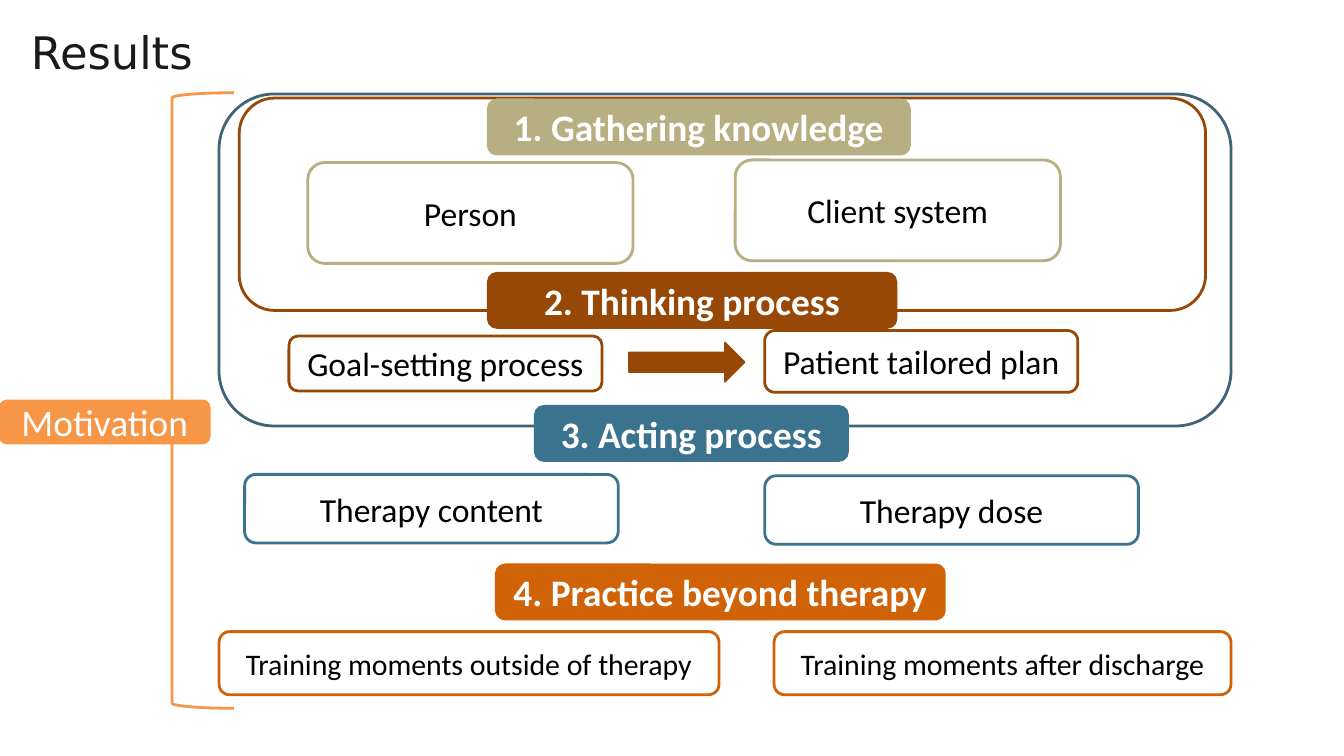
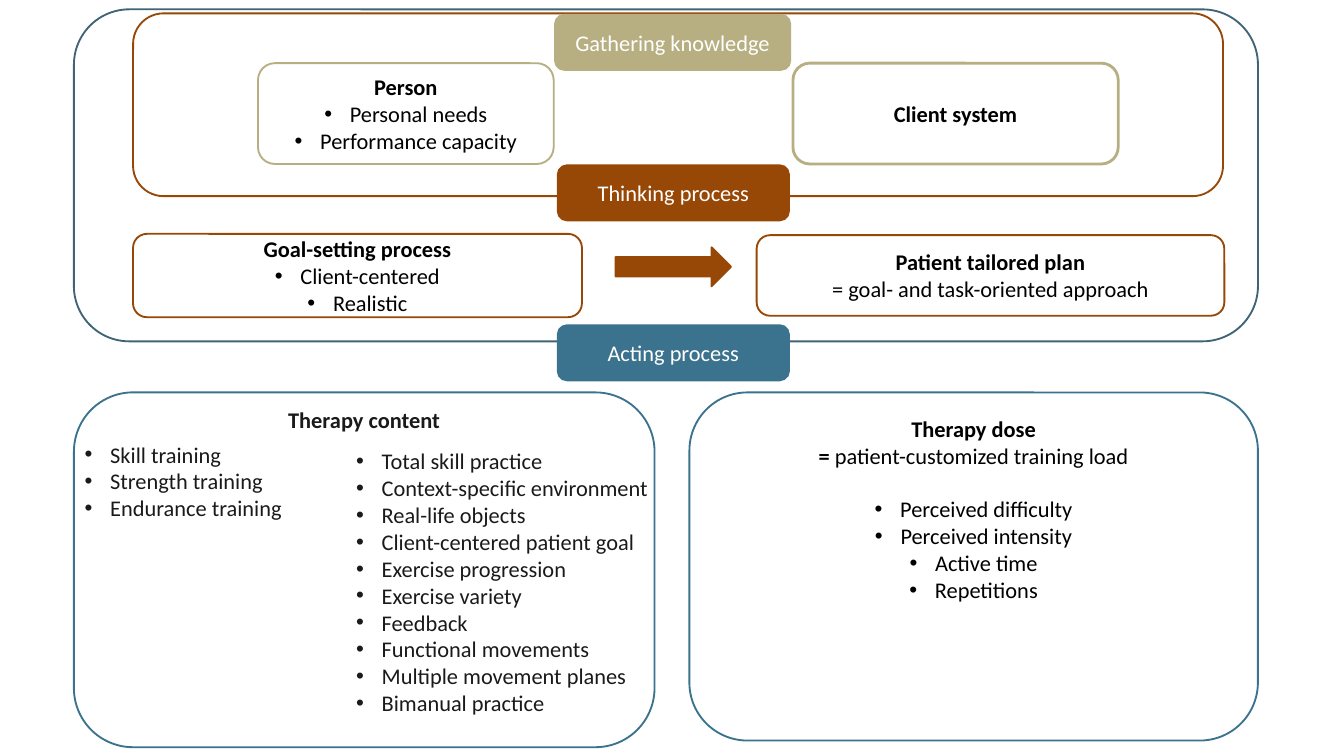
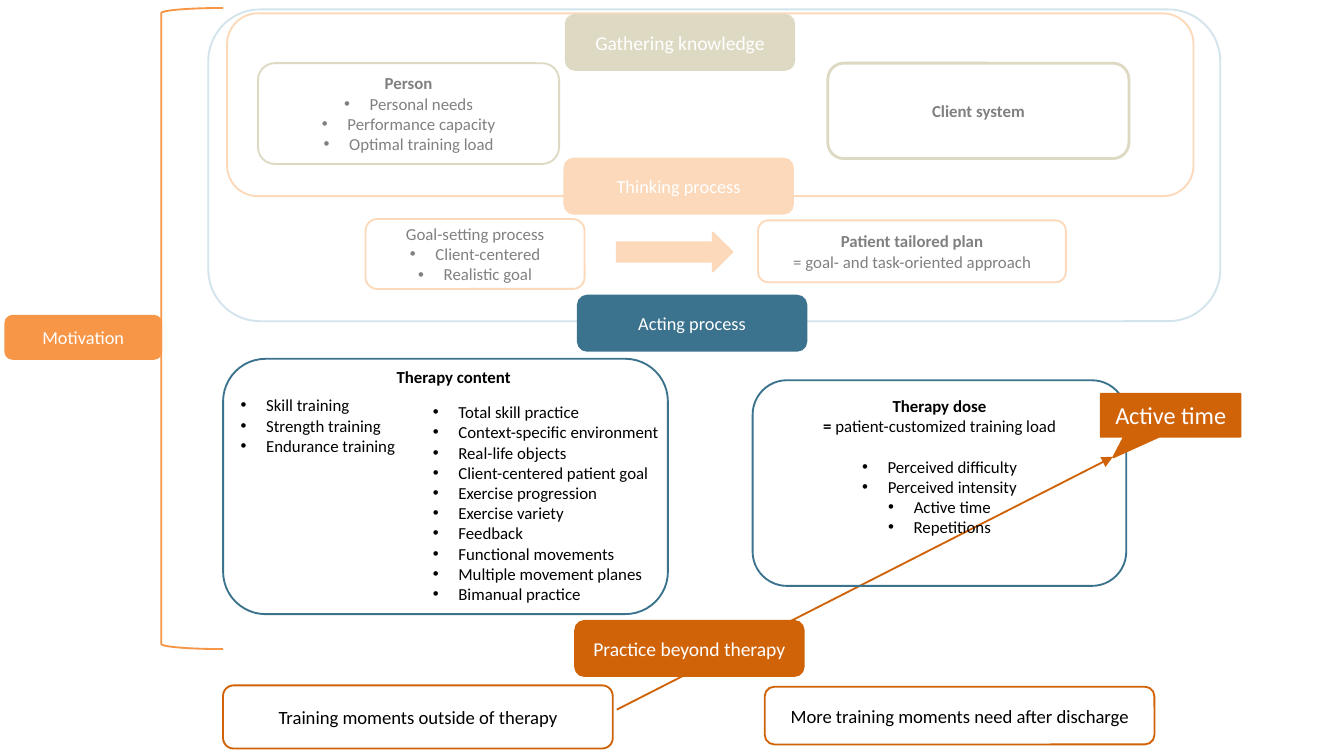
from lxml.etree import SubElement
from pptx import Presentation
from pptx.dml.color import RGBColor
from pptx.enum.shapes import MSO_CONNECTOR, MSO_SHAPE as Preset
from pptx.enum.text import MSO_ANCHOR as Anchor, PP_ALIGN as Align
from pptx.oxml.ns import qn
from pptx.util import Inches, Pt

COLOURS = {
    "paper": "FEFFFE", "white": "FFFFFF", "black": "000000", "ink": "1A1A1A", "grey": "808080",
    "knowledge": "B7AF81", "thinking": "974806", "acting": "3B728D", "practice": "D06208",
    "motivation": "F79646", "frame": "406476",
    "pale knowledge": "DDD9C3", "pale thinking": "FCD9BB", "pale frame": "D3E4ED",
}
BODY_FONT, TITLE_FONT = "Calibri", "DejaVu Sans"

presentation = Presentation()
presentation.slide_width, presentation.slide_height = Inches(10), Inches(5.625)
CELL = presentation.slide_width / 100  # square grid: 100 columns, 56.25 rows
BULLET_INDENT = int(1.9 * CELL)


def grid(*cells):
    return [int(cell * CELL) for cell in cells]


def add_box(slide, place, colour=None, lines=(), size=12, ink="black", filled=False, width=1,
            preset=Preset.ROUNDED_RECTANGLE, align=Align.CENTER, anchor=Anchor.MIDDLE, font=BODY_FONT):
    """Add a shape, or a text box if colour is None.

    In a line, the part before "|" is bold, and a leading "•" makes a bullet.
    """
    if colour is None:
        shape = slide.shapes.add_textbox(*grid(*place))
        margins = grid(0.5, 0.5)
    else:
        shape = slide.shapes.add_shape(preset, *grid(*place))
        shape.shadow.inherit = False
        shape.line.color.rgb = RGBColor.from_string(COLOURS[colour])
        shape.line.width = Pt(width)
        if filled:
            shape.fill.solid()
            shape.fill.fore_color.rgb = RGBColor.from_string(COLOURS[colour])
        else:
            shape.fill.background()
        margins = grid(0.7, 0.4)
    frame = shape.text_frame
    frame.word_wrap = True
    frame.vertical_anchor = anchor
    frame.margin_left = frame.margin_right = margins[0]
    frame.margin_top = frame.margin_bottom = margins[1]
    for number, line in enumerate(lines):
        paragraph = frame.add_paragraph() if number else frame.paragraphs[0]
        paragraph.alignment = align
        if line.startswith("•"):
            properties = paragraph._p.get_or_add_pPr()
            properties.set("marL", str(BULLET_INDENT))
            properties.set("indent", str(-BULLET_INDENT))
            SubElement(properties, qn("a:buFont"), typeface="Arial")
            SubElement(properties, qn("a:buChar"), char="•")
            line = line.removeprefix("•")
        paragraph.font.name, paragraph.font.size = font, Pt(size)
        paragraph.font.color.rgb = RGBColor.from_string(COLOURS[ink])
        bold_part, _, plain_part = line.rpartition("|")
        for text, bold in ((bold_part, True), (plain_part, False)):
            if text:
                run = paragraph.add_run()
                run.text, run.font.bold = text, bold
    return shape


NEEDS = ["Person|", "•Personal needs", "•Performance capacity"]
PLAN = ["Patient tailored plan|", "= goal- and task-oriented approach"]
DOSE = ["Therapy dose|", "= |patient-customized training load", "•Perceived difficulty",
        "•Perceived intensity", "•Active time", "•Repetitions"]
TRAINING = ["•Skill training", "•Strength training", "•Endurance training"]
FEATURES = ["•Total skill practice", "•Context-specific environment", "•Real-life objects",
            "•Client-centered patient goal", "•Exercise progression", "•Exercise variety",
            "•Feedback", "•Functional movements", "•Multiple movement planes", "•Bimanual practice"]

overview, details, link = [
    presentation.slides.add_slide(presentation.slide_layouts[6]) for _ in range(3)]
for slide in (overview, details, link):
    slide.background.fill.solid()
    slide.background.fill.fore_color.rgb = RGBColor.from_string(COLOURS["paper"])

# Link from training outside of therapy to active time, behind the boxes
left, top, right, bottom = grid(45.9, 34, 82.8, 52.8)
arrow = link.shapes.add_connector(MSO_CONNECTOR.STRAIGHT, left, bottom, right, top)
arrow.line.color.rgb = RGBColor.from_string(COLOURS["practice"])
arrow.line.width = Pt(1)
SubElement(arrow.line._get_or_add_ln(), qn("a:tailEnd"), type="triangle")
SubElement(arrow._element.spPr, qn("a:effectLst"))

# Frames around the phases, and the block arrow from goals to plan
for slide, width, thinking, frame_colour, inner, outer, step in (
    (overview, 1.5, "thinking", "frame", (17.8, 7.3, 71.9, 15.8), (16.3, 7, 75.3, 24.7), (46.8, 25.5)),
    (details, 1, "thinking", "frame", (9.9, 1, 81.1, 13.6), (5.5, 0.7, 88.1, 24.7), (45.8, 18.4)),
    (link, 1, "pale thinking", "pale frame", (16.9, 1, 71.9, 13.6), (15.5, 0.7, 75.3, 23.2), (45.9, 17.3)),
):
    add_box(slide, inner, thinking, width=width)
    add_box(slide, outer, frame_colour, width=width)
    add_box(slide, (*step, 8.6, 2.9), thinking, filled=True, preset=Preset.RIGHT_ARROW)

# Outlined cards
for place, colour, text, size in (
    ((22.9, 12.1, 24.2, 7.5), "knowledge", "Person", 18),
    ((54.7, 11.9, 24.2, 7.5), "knowledge", "Client system", 18),
    ((21.5, 25, 23.3, 4.1), "thinking", "Goal-setting process", 18),
    ((56.9, 24.6, 23.3, 4.6), "thinking", "Patient tailored plan", 18),
    ((18.2, 35.3, 27.8, 5.1), "acting", "Therapy content", 18),
    ((56.9, 35.4, 27.8, 5.1), "acting", "Therapy dose", 18),
    ((16.3, 47, 37.2, 4.7), "practice", "Training moments outside of therapy", 16),
    ((57.6, 47, 34, 4.7), "practice", "Training moments after discharge", 16),
):
    add_box(overview, place, colour, [text], size, width=1.5)

for place, colour, lines, width in (
    ((19.2, 4.7, 22, 7.5), "knowledge", NEEDS, 1),
    ((59, 4.7, 24.2, 7.5), "knowledge", ["Client system|"], 1.5),
    ((9.9, 17.4, 33.4, 6.2), "thinking",
     ["Goal-setting process|", "•Client-centered", "•Realistic"], 1),
    ((56.3, 17.5, 34.8, 6), "thinking", PLAN, 1),
):
    add_box(details, place, colour, lines, width=width)

for place, colour, lines, width in (
    ((19.2, 4.7, 22.4, 7.5), "pale knowledge", NEEDS + ["•Optimal training load"], 1),
    ((61.6, 4.7, 22.4, 7.1), "pale knowledge", ["Client system|"], 1.5),
    ((27.2, 16.3, 16.3, 5.2), "pale thinking",
     ["Goal-setting process", "•Client-centered", "•Realistic goal"], 1),
    ((56.4, 16.4, 22.9, 4.6), "pale thinking", PLAN, 1),
):
    add_box(link, place, colour, lines, 9, "grey", width=width)
add_box(link, (16.6, 51, 29, 4.7), "practice", ["Training moments outside of therapy"], 10)
add_box(link, (56.9, 51.1, 29, 4.3), "practice", ["More training moments need after discharge"], 10)

# Therapy content and therapy dose in full
for slide, size, ink, content, dose, heading, training, features in (
    (details, 12, "ink", (5.5, 29.2, 43.2, 26.4), (51.3, 29.2, 42.3, 25.9),
     (20.6, 29.7, 13, 3), (5.8, 32.3, 25.1, 7.1), (26, 32.8, 26, 22.7)),
    (link, 9, "black", (16.6, 26.7, 33.1, 19), (56, 28.3, 27.8, 15.3),
     (27.4, 26.8, 12.7, 2.5), (17.4, 28.9, 12.7, 5.6), (31.7, 29.4, 19.2, 16.2)),
):
    add_box(slide, content, "acting")
    dose_box = add_box(slide, dose, "acting", DOSE, size, anchor=Anchor.TOP)
    dose_box.text_frame.paragraphs[2].space_before = Pt(1.2 * size)
    add_box(slide, heading, None, ["Therapy content|"], size, ink, anchor=Anchor.TOP)
    for place, lines in ((training, TRAINING), (features, FEATURES)):
        add_box(slide, place, None, lines, size, ink, align=Align.LEFT, anchor=Anchor.TOP)

# Filled phase badges, all of one height
for slide, left, top, width, colour, text, size in (
    (overview, 36.3, 7.4, 31.4, "knowledge", "1. Gathering knowledge|", 20),
    (overview, 36.3, 20.3, 30.4, "thinking", "2. Thinking process|", 20),
    (overview, 39.8, 30.2, 23.3, "acting", "3. Acting process|", 20),
    (overview, 36.9, 42, 33.4, "practice", "4. Practice beyond therapy|", 20),
    (details, 41.3, 1.1, 17.5, "knowledge", "Gathering knowledge", 12),
    (details, 41.5, 12.3, 17.2, "thinking", "Thinking process", 12),
    (details, 41.5, 24.2, 17.2, "acting", "Acting process", 12),
    (link, 42.1, 1.1, 17, "pale knowledge", "Gathering knowledge", 10.5),
    (link, 42, 11.8, 17, "pale thinking", "Thinking process", 9.8),
    (link, 43, 22, 17, "acting", "Acting process", 9.8),
    (link, 42.8, 46.2, 17, "practice", "Practice beyond therapy", 10.5),
):
    add_box(slide, (left, top, width, 4.1), colour, [text], size, "white", filled=True)

# Motivation spans all phases
for slide, span, label, size, width in (
    (overview, (12.8, 6.9, 4.6, 45.8), (0, 29.8, 15.6, 3.2), 20, 1.5),
    (link, (12, 0.6, 4.6, 47.7), (0.4, 23.5, 11.6, 3.2), 9.8, 1),
):
    add_box(slide, span, "motivation", width=width, preset=Preset.LEFT_BRACKET)
    add_box(slide, label, "motivation", ["Motivation"], size, "white", filled=True)

callout = add_box(link, (81.9, 29.3, 10.4, 3.2), "practice", ["Active time"], 13, "white",
                  filled=True, preset=Preset.RECTANGULAR_CALLOUT)
callout.adjustments[0], callout.adjustments[1] = -0.41, 0.98

add_box(overview, (1.8, 1, 89.9, 5.7), None, ["Results"], 24, "ink",
        align=Align.LEFT, anchor=Anchor.MIDDLE, font=TITLE_FONT)

presentation.save("out.pptx")
